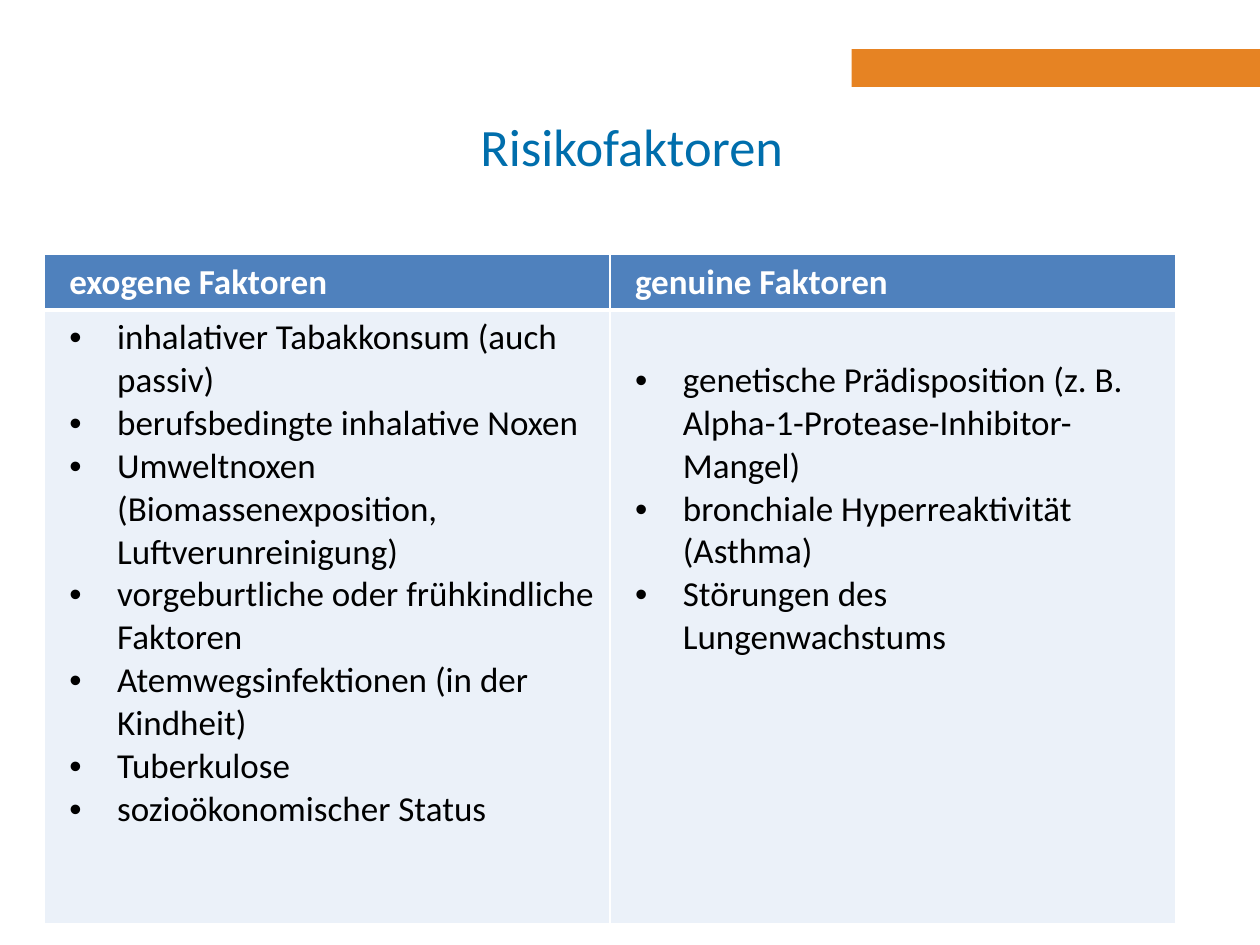
from dataclasses import dataclass

from lxml import etree
from pptx import Presentation
from pptx.dml.color import RGBColor
from pptx.enum.shapes import MSO_SHAPE
from pptx.enum.text import MSO_ANCHOR, PP_ALIGN
from pptx.oxml.ns import qn
from pptx.util import Inches, Pt

RECTANGLE = MSO_SHAPE.RECTANGLE
MIDDLE, TOP = MSO_ANCHOR.MIDDLE, MSO_ANCHOR.TOP
CENTER = PP_ALIGN.CENTER

ORANGE = RGBColor(0xE6, 0x83, 0x23)
TITLE_BLUE = RGBColor(0x00, 0x6E, 0xAC)
HEADER_BLUE = RGBColor(0x4F, 0x81, 0xBD)
PALE_BLUE = RGBColor(0xEB, 0xF1, 0xF9)
WHITE = RGBColor(0xFF, 0xFF, 0xFF)
BLACK = RGBColor(0x00, 0x00, 0x00)

FONT = "Calibri"
TITLE_SIZE, TABLE_SIZE = 30, 20
BULLET_INDENT = Inches(0.38)
COLUMN_WIDTH = Inches(4.49)
HEADER_HEIGHT, BODY_HEIGHT = Inches(0.43), Inches(4.87)
THIN, THICK = 1, 3


@dataclass
class FactorColumn:
    heading: str
    factors: list[str]
    top_margin: float
    right_margin: float


COLUMNS = [
    FactorColumn("exogene Faktoren", [
        "inhalativer Tabakkonsum (auch passiv)",
        "berufsbedingte inhalative Noxen",
        "Umweltnoxen (Biomassenexposition, Luftverunreinigung)",
        "vorgeburtliche oder frühkindliche Faktoren",
        "Atemwegsinfektionen (in der Kindheit)",
        "Tuberkulose",
        "sozioökonomischer Status",
    ], top_margin=0.05, right_margin=0.1),
    FactorColumn("genuine Faktoren", [
        "genetische Prädisposition (z. B. Alpha-1-Protease-Inhibitor-Mangel)",
        "bronchiale Hyperreaktivität (Asthma)",
        "Störungen des Lungenwachstums",
    ], top_margin=0.39, right_margin=0.2),
]


def write(para, text: str, *, size: int, color: RGBColor, bold: bool = False) -> None:
    span = para.add_run()
    span.text = text
    span.font.name = FONT
    span.font.size = Pt(size)
    span.font.bold = bold
    span.font.color.rgb = color


def add_bullet(para) -> None:
    properties = para._p.get_or_add_pPr()
    properties.set("marL", str(BULLET_INDENT))
    properties.set("indent", str(-BULLET_INDENT))
    etree.SubElement(properties, qn("a:buFont"), typeface="Arial")
    etree.SubElement(properties, qn("a:buChar"), char="•")


def set_borders(cell, *, top: int, bottom: int) -> None:
    properties = cell._tc.get_or_add_tcPr()
    widths = {"a:lnL": THIN, "a:lnR": THIN, "a:lnT": top, "a:lnB": bottom}
    for tag, width in widths.items():
        line = etree.SubElement(properties, qn(tag), w=str(Pt(width)))
        fill = etree.SubElement(line, qn("a:solidFill"))
        etree.SubElement(fill, qn("a:srgbClr"), val=str(WHITE))


def fill_cell(cell, lines: list[str], *, fill: RGBColor, color: RGBColor, anchor,
              top_margin: float = 0.05, right_margin: float = 0.1,
              bold: bool = False, bullets: bool = False) -> None:
    cell.margin_left, cell.margin_right = Inches(0.2), Inches(right_margin)
    cell.margin_top, cell.margin_bottom = Inches(top_margin), Inches(0.05)
    cell.vertical_anchor = anchor
    cell.fill.solid()
    cell.fill.fore_color.rgb = fill
    frame = cell.text_frame
    for index, line in enumerate(lines):
        para = frame.add_paragraph() if index else frame.paragraphs[0]
        if bullets:
            add_bullet(para)
        write(para, line, size=TABLE_SIZE, color=color, bold=bold)


def add_accent_bar(page) -> None:
    bar = page.shapes.add_shape(RECTANGLE, Inches(6.76), Inches(0.39), Inches(3.24), Inches(0.3))
    bar.shadow.inherit = False
    bar.fill.solid()
    bar.fill.fore_color.rgb = ORANGE
    bar.line.fill.background()


def format_title(page, text: str) -> None:
    title = page.shapes.title
    title.left, title.top = Inches(1.48), Inches(0.69)
    title.width, title.height = Inches(7.07), Inches(0.93)
    title.text_frame.vertical_anchor = MIDDLE
    para = title.text_frame.paragraphs[0]
    para.alignment = CENTER
    write(para, text, size=TITLE_SIZE, color=TITLE_BLUE)


def add_factor_table(page, columns: list[FactorColumn]) -> None:
    table = page.shapes.add_table(
        2, len(columns), Inches(0.35), Inches(2.02),
        COLUMN_WIDTH * len(columns), HEADER_HEIGHT + BODY_HEIGHT).table
    table.rows[0].height, table.rows[1].height = HEADER_HEIGHT, BODY_HEIGHT
    for index, column in enumerate(columns):
        table.columns[index].width = COLUMN_WIDTH
        header, body = table.cell(0, index), table.cell(1, index)
        set_borders(header, top=THIN, bottom=THICK)
        set_borders(body, top=THICK, bottom=THIN)
        fill_cell(header, [column.heading], fill=HEADER_BLUE, color=WHITE,
                  anchor=MIDDLE, bold=True)
        fill_cell(body, column.factors, fill=PALE_BLUE, color=BLACK, anchor=TOP,
                  top_margin=column.top_margin, right_margin=column.right_margin,
                  bullets=True)


def main() -> None:
    deck = Presentation()
    deck.slide_width, deck.slide_height = Inches(10), Inches(7.5)
    page = deck.slides.add_slide(deck.slide_layouts.get_by_name("Title Only"))
    add_accent_bar(page)
    format_title(page, "Risikofaktoren")
    add_factor_table(page, COLUMNS)
    deck.save("out.pptx")


if __name__ == "__main__":
    main()
